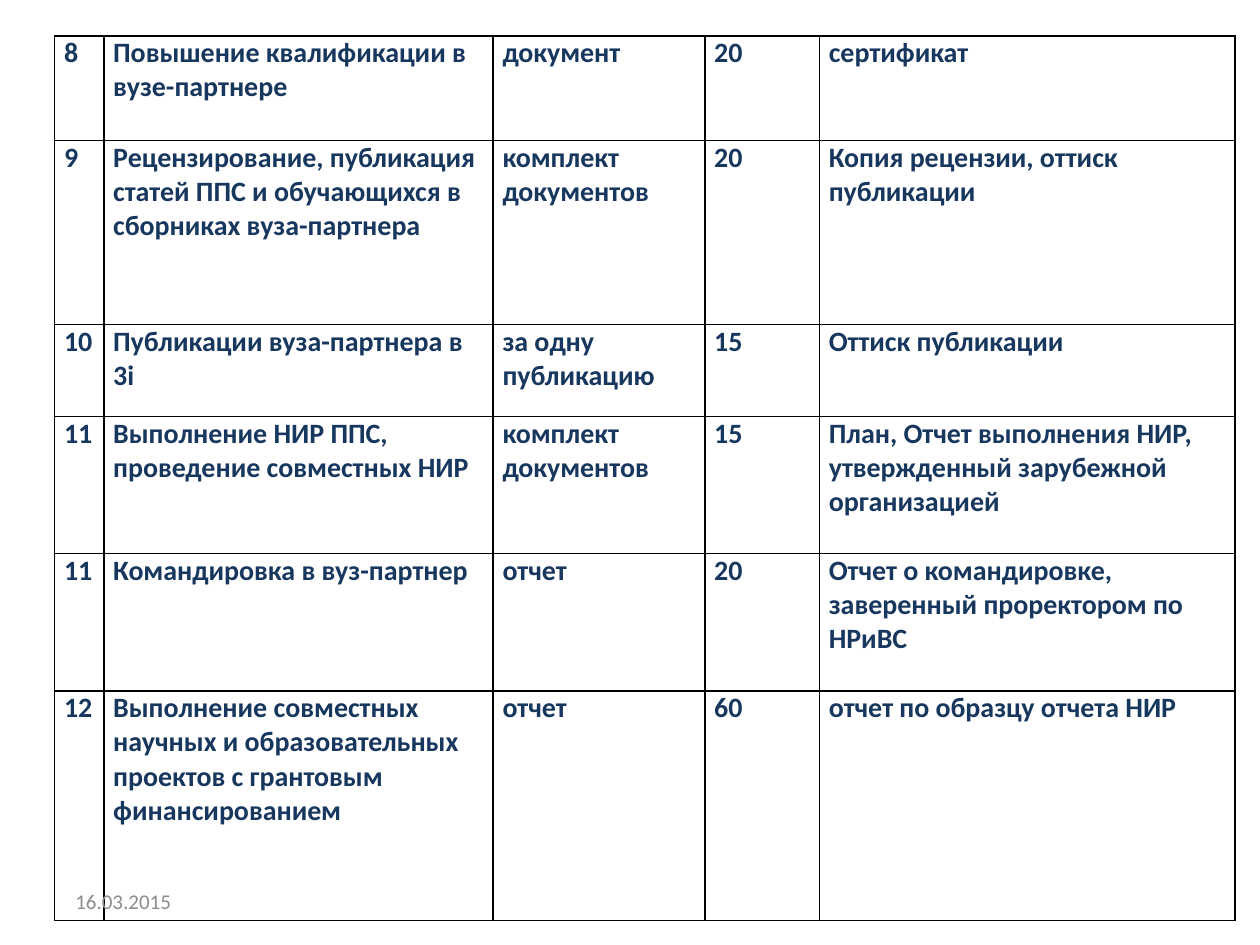
import pptx
import pptx.dml.color
import pptx.enum.text
import pptx.oxml
import pptx.oxml.ns
import pptx.util

Inches = pptx.util.Inches
Pt = pptx.util.Pt
BORDER = (
    '<a:{side} {namespace} w="12700"><a:solidFill><a:srgbClr val="000000"/></a:solidFill>'
    '<a:prstDash val="solid"/></a:{side}>'
)


def write(frame, text, size, color, bold=False):
    span = frame.paragraphs[0].add_run()
    span.text = text
    span.font.name = "Calibri"
    span.font.size = Pt(size)
    span.font.bold = bold
    span.font.color.rgb = pptx.dml.color.RGBColor.from_string(color)


deck = pptx.Presentation()
deck.slide_width, deck.slide_height = Inches(10), Inches(7.5)
page = deck.slides.add_slide(deck.slide_layouts[6])

column_widths = [0.39, 3.09, 1.68, 0.91, 3.3]
row_heights = [0.83, 1.46, 0.73, 1.09, 1.09, 1.82]
activities = [
    ("8", "Повышение квалификации в вузе-партнере", "документ", "20", "сертификат"),
    ("9", "Рецензирование, публикация статей ППС и обучающихся в сборниках вуза-партнера",
     "комплект документов", "20", "Копия рецензии, оттиск публикации"),
    ("10", "Публикации вуза-партнера в 3i", "за одну публикацию", "15", "Оттиск публикации"),
    ("11", "Выполнение НИР ППС, проведение совместных НИР", "комплект документов", "15",
     "План, Отчет выполнения НИР, утвержденный зарубежной организацией"),
    ("11", "Командировка в вуз-партнер", "отчет", "20",
     "Отчет о командировке, заверенный проректором по НРиВС"),
    ("12", "Выполнение совместных научных и образовательных проектов с грантовым финансированием",
     "отчет", "60", "отчет по образцу отчета НИР"),
]

table = page.shapes.add_table(
    len(row_heights), len(column_widths), Pt(31.25), Pt(20.5),
    Inches(sum(column_widths)), Inches(sum(row_heights)),
).table
table.first_row = table.horz_banding = False
for column, width in zip(table.columns, column_widths):
    column.width = Inches(width)

for row, height, texts in zip(table.rows, row_heights, activities):
    row.height = Inches(height)
    for cell, text in zip(row.cells, texts):
        cell.margin_left = cell.margin_right = Pt(5.4)
        cell.margin_top = cell.margin_bottom = 0
        write(cell.text_frame, text, size=16, color="17375E", bold=True)
        properties = cell._tc.get_or_add_tcPr()
        for side in ("lnL", "lnR", "lnT", "lnB"):
            border = BORDER.format(side=side, namespace=pptx.oxml.ns.nsdecls("a"))
            properties.append(pptx.oxml.parse_xml(border))
        cell.fill.background()

date_box = page.shapes.add_textbox(Inches(0.5), Inches(6.95), Inches(2.33), Inches(0.4))
date_box.text_frame.word_wrap = True
date_box.text_frame.vertical_anchor = pptx.enum.text.MSO_ANCHOR.MIDDLE
write(date_box.text_frame, "16.03.2015", size=12, color="8C8C8C")

deck.save("out.pptx")
